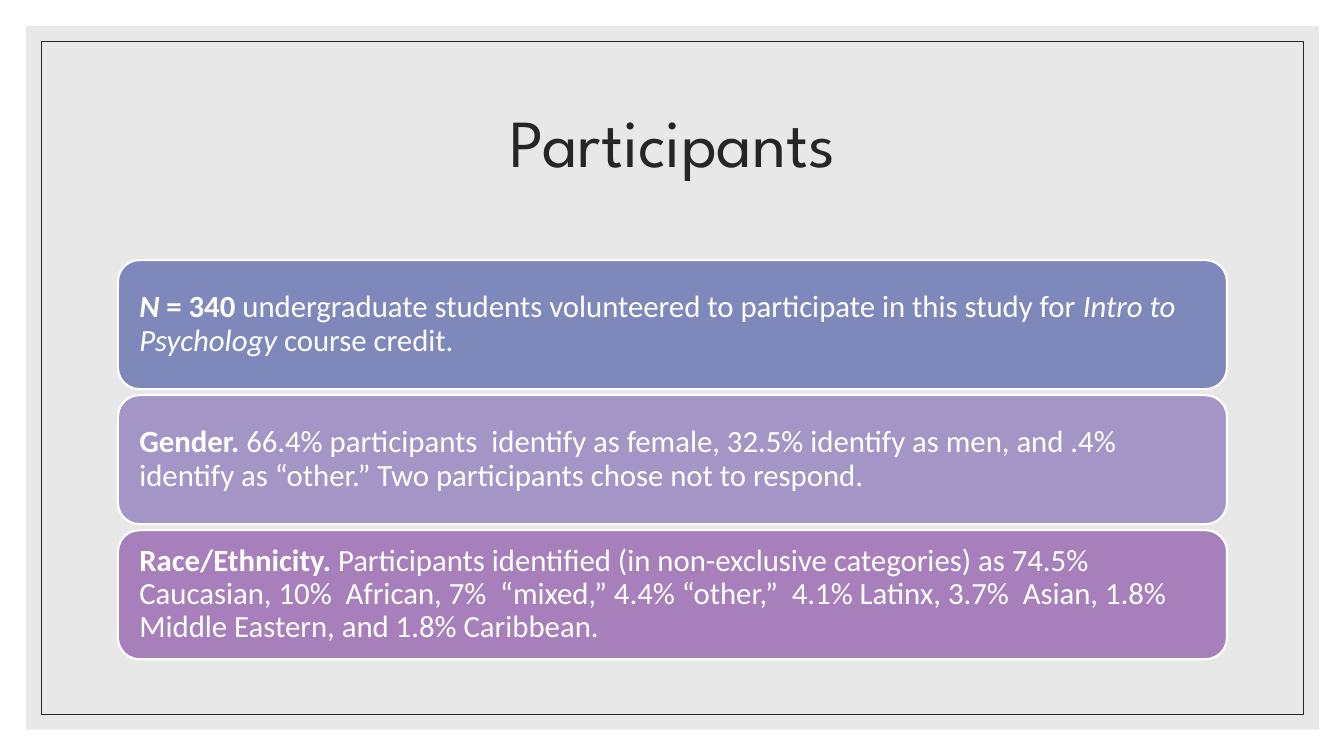
import dataclasses
import lxml.etree
import pptx
import pptx.dml.color
import pptx.enum.shapes
import pptx.enum.text
import pptx.oxml.ns
import pptx.util

Inches = pptx.util.Inches
Shapes = pptx.enum.shapes.MSO_SHAPE
Alignment = pptx.enum.text.PP_ALIGN


@dataclasses.dataclass(frozen=True)
class Theme:
    white: str = "FFFFFF"
    panel: str = "D9D9D9"
    panel_opacity: int = 60
    ink: str = "262626"
    cards: tuple = ("7F88BA", "A396C6", "A77FBA")
    title_font: str = "League Spartan"
    body_font: str = "Calibri"
    title_size: int = 48
    body_size: int = 22


CARDS = (
    (
        ("N", "bi"),
        (" = 340 ", "b"),
        ("undergraduate students volunteered to participate in this study for ", ""),
        ("Intro to Psychology ", "i"),
        ("course credit.", ""),
    ),
    (
        ("Gender. ", "b"),
        ("66.4% participants  identify as female, 32.5% identify as men, and .4% "
         "identify as “other.” Two participants chose not to respond.", ""),
    ),
    (
        ("Race/Ethnicity. ", "b"),
        ("Participants identified (in non-exclusive categories) as 74.5% Caucasian, "
         "10%  African, 7%  “mixed,” 4.4% “other,”  4.1% Latinx, 3.7%  Asian, "
         "1.8% Middle Eastern, and 1.8% Caribbean.", ""),
    ),
)


class SlideBuilder:
    def __init__(self, slide, theme):
        self.slide = slide
        self.theme = theme

    def color(self, value):
        return pptx.dml.color.RGBColor.from_string(value)

    def background(self, color):
        fill = self.slide.background.fill
        fill.solid()
        fill.fore_color.rgb = self.color(color)

    def box(self, kind, bounds, fill=None, line=None, width=0, opacity=100):
        shape = self.slide.shapes.add_shape(kind, *map(Inches, bounds))
        shape.shadow.inherit = False
        if fill:
            shape.fill.solid()
            shape.fill.fore_color.rgb = self.color(fill)
        else:
            shape.fill.background()
        if opacity < 100:
            color = shape.element.spPr.find(".//" + pptx.oxml.ns.qn("a:srgbClr"))
            alpha = lxml.etree.SubElement(color, pptx.oxml.ns.qn("a:alpha"))
            alpha.set("val", str(opacity * 1000))
        if line:
            shape.line.color.rgb = self.color(line)
            shape.line.width = pptx.util.Pt(width)
        else:
            shape.line.fill.background()
        return shape

    def add_text(self, shape, runs, font, size, color, alignment):
        frame = shape.text_frame
        frame.word_wrap = True
        frame.auto_size = pptx.enum.text.MSO_AUTO_SIZE.NONE
        frame.vertical_anchor = pptx.enum.text.MSO_ANCHOR.MIDDLE
        paragraph = frame.paragraphs[0]
        paragraph.alignment = alignment
        paragraph.line_spacing = 0.9
        for text, style in runs:
            run = paragraph.add_run()
            run.text = text
            run.font.name = font
            run.font.size = pptx.util.Pt(size)
            run.font.color.rgb = self.color(color)
            run.font.bold = "b" in style
            run.font.italic = "i" in style

    def title(self, text, bounds):
        title = self.slide.shapes.title
        title.left, title.top, title.width, title.height = map(Inches, bounds)
        self.add_text(title, [(text, "")], self.theme.title_font,
                      self.theme.title_size, self.theme.ink, Alignment.CENTER)
        title.element.getparent().append(title.element)

    def card(self, runs, bounds, fill):
        card = self.box(Shapes.ROUNDED_RECTANGLE, bounds, fill, self.theme.white, 1.5)
        frame = card.text_frame
        frame.margin_left = frame.margin_right = Inches(0.15)
        frame.margin_top = frame.margin_bottom = Inches(0.15)
        self.add_text(card, runs, self.theme.body_font, self.theme.body_size,
                      self.theme.white, Alignment.LEFT)


def main():
    presentation = pptx.Presentation()
    presentation.slide_width = Inches(13.33)
    presentation.slide_height = Inches(7.5)
    theme = Theme()
    slide = presentation.slides.add_slide(presentation.slide_layouts[5])
    builder = SlideBuilder(slide, theme)

    builder.background(theme.white)
    builder.box(Shapes.RECTANGLE, (0.26, 0.26, 12.82, 6.98), theme.panel,
                opacity=theme.panel_opacity)
    builder.box(Shapes.RECTANGLE, (0.41, 0.41, 12.52, 6.68), line=theme.ink, width=0.5)
    builder.title("Participants", (1.17, 0.7, 11, 1.5))

    card_top, card_height, card_gap = 2.58, 1.28, 0.06
    for index, (runs, fill) in enumerate(zip(CARDS, theme.cards)):
        top = card_top + index * (card_height + card_gap)
        builder.card(runs, (1.17, top, 11, card_height), fill)

    presentation.save("out.pptx")


if __name__ == "__main__":
    main()
